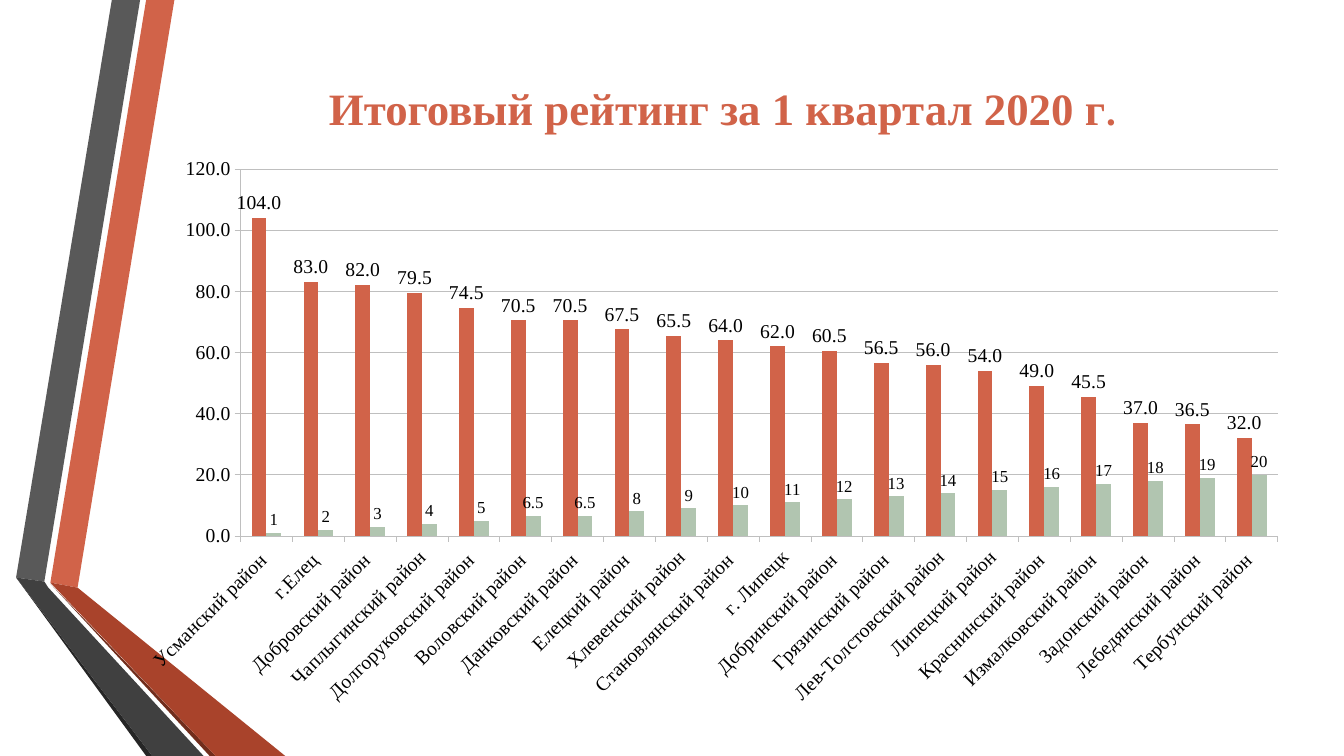
from dataclasses import dataclass

from lxml.etree import SubElement
from pptx import Presentation
from pptx.chart.data import CategoryChartData as ChartData
from pptx.dml.color import RGBColor
from pptx.enum.chart import XL_CHART_TYPE as ChartType
from pptx.enum.chart import XL_LABEL_POSITION as LabelPos
from pptx.enum.chart import XL_TICK_MARK as TickMark
from pptx.enum.text import MSO_AUTO_SIZE as AutoSize
from pptx.enum.text import PP_ALIGN as Align
from pptx.oxml.ns import qn
from pptx.util import Inches, Pt

FONT = "Times New Roman"
ACCENT = "D16349"
GRID = "BFBFBF"


@dataclass
class Ribbon:
    color: str
    points: list[tuple[float, float]]


@dataclass
class Series:
    name: str
    color: str
    label_size: int
    number_format: str
    values: list[float]


RIBBONS = [
    Ribbon(ACCENT, [(0.5, 5.78), (0.77, 5.83), (1.73, 0), (1.45, 0)]),
    Ribbon("595959", [(1.39, 0), (1.11, 0), (0.16, 5.73), (0.44, 5.77)]),
    Ribbon("262626", [(0.16, 5.73), (1.45, 7.5), (1.51, 7.5)]),
    Ribbon("712D1C", [(0.5, 5.79), (2.08, 7.5), (2.14, 7.5)]),
    Ribbon("A9432B", [(0.5, 5.78), (2.14, 7.5), (2.83, 7.5), (0.77, 5.83)]),
    Ribbon("404040", [(2.02, 7.5), (0.48, 5.83), (0.44, 5.77), (0.16, 5.73), (1.51, 7.5)]),
]

DISTRICTS = [
    "Усманский район ", "г.Елец ", "Добровский район ", "Чаплыгинский район",
    "Долгоруковский район ", "Воловский район ", "Данковский район ", "Елецкий район ",
    "Хлевенский район", "Становлянский район ", "г. Липецк", "Добринский район ",
    "Грязинский район ", "Лев-Толстовский район", "Липецкий район", "Краснинский район ",
    "Измалковский район ", "Задонский район ", "Лебедянский район ", "Тербунский район ",
]

SERIES = [
    Series("Series 1", ACCENT, 14, "0.0",
           [104, 83, 82, 79.5, 74.5, 70.5, 70.5, 67.5, 65.5, 64,
            62, 60.5, 56.5, 56, 54, 49, 45.5, 37, 36.5, 32]),
    Series("Series 2", "B1C5B0", 12, "General",
           [1, 2, 3, 4, 5, 6.5, 6.5, *range(8, 21)]),
]


def rgb(color: str) -> RGBColor:
    return RGBColor.from_string(color)


def set_all(obj, formats: dict) -> None:
    for name, value in formats.items():
        setattr(obj, name, value)


def style_font(font, size: float, color: str = "000000", bold: bool = False) -> None:
    set_all(font, {"name": FONT, "size": Pt(size), "bold": bold})
    font.color.rgb = rgb(color)


def style_line(line) -> None:
    line.color.rgb = rgb(GRID)
    line.width = Pt(0.5)


def add_ribbon(s, ribbon: Ribbon) -> None:
    points = [(Inches(x), Inches(y)) for x, y in ribbon.points]
    builder = s.shapes.build_freeform(*points[0])
    builder.add_line_segments(points[1:], close=True)
    sp = builder.convert_to_shape()
    sp.shadow.inherit = False
    sp.fill.solid()
    sp.fill.fore_color.rgb = rgb(ribbon.color)
    sp.line.fill.background()


def add_title(s) -> None:
    sp = s.shapes.add_textbox(Inches(2.49), Inches(0.75), Inches(9.35), Inches(0.64))
    tf = sp.text_frame
    set_all(tf, {"word_wrap": True, "auto_size": AutoSize.SHAPE_TO_FIT_TEXT})
    p = tf.paragraphs[0]
    p.alignment = Align.CENTER
    for text, size in (("Итоговый рейтинг за 1 квартал 2020 г", 32), (".", 28)):
        r = p.add_run()
        r.text = text
        style_font(r.font, size, ACCENT, bold=True)


def place_plot(chart, x: float, y: float, w: float, h: float) -> None:
    plot_area = chart.plots[0]._element.getparent()
    for old in plot_area.findall(qn("c:layout")):
        plot_area.remove(old)
    layout = SubElement(plot_area, qn("c:layout"))
    plot_area.insert(0, layout)
    manual = SubElement(layout, qn("c:manualLayout"))
    parts = {"layoutTarget": "inner", "xMode": "edge", "yMode": "edge",
             "x": x, "y": y, "w": w, "h": h}
    for tag, value in parts.items():
        SubElement(manual, qn(f"c:{tag}")).set("val", str(value))


def style_axes(chart) -> None:
    cat, val = chart.category_axis, chart.value_axis
    for axis in (cat, val):
        set_all(axis, {"major_tick_mark": TickMark.OUTSIDE, "minor_tick_mark": TickMark.NONE})
        style_line(axis.format.line)
        style_font(axis.tick_labels.font, 14)
    cat.has_major_gridlines = False
    body = cat._element.find(qn("c:txPr")).find(qn("a:bodyPr"))
    body.set("rot", "-2700000")
    body.set("vert", "horz")
    set_all(val, {"minimum_scale": 0, "maximum_scale": 120, "major_unit": 20,
                  "has_major_gridlines": True})
    style_line(val.major_gridlines.format.line)
    set_all(val.tick_labels, {"number_format": "0.0", "number_format_is_linked": False})


def add_rating_chart(s) -> None:
    data = ChartData()
    data.categories = DISTRICTS
    for series in SERIES:
        data.add_series(series.name, series.values)
    chart = s.shapes.add_chart(ChartType.COLUMN_CLUSTERED, Inches(0.91), Inches(1.39),
                               Inches(11.81), Inches(5.71), data).chart
    set_all(chart, {"has_legend": False, "has_title": False})
    style_font(chart.font, 12)
    plot = chart.plots[0]
    set_all(plot, {"gap_width": 150, "overlap": 0, "vary_by_categories": False})
    for series, bars in zip(SERIES, plot.series):
        bars.invert_if_negative = False
        bars.format.fill.solid()
        bars.format.fill.fore_color.rgb = rgb(series.color)
        labels = bars.data_labels
        set_all(labels, {"show_value": True, "position": LabelPos.OUTSIDE_END,
                         "number_format": series.number_format,
                         "number_format_is_linked": False})
        style_font(labels.font, series.label_size)
    style_axes(chart)
    place_plot(chart, 0.125, 0.05, 0.871, 0.638)


def main() -> None:
    prs = Presentation()
    set_all(prs, {"slide_width": Inches(13.33), "slide_height": Inches(7.5)})
    s = prs.slides.add_slide(prs.slide_layouts[6])
    for ribbon in RIBBONS:
        add_ribbon(s, ribbon)
    add_title(s)
    add_rating_chart(s)
    prs.save("out.pptx")


if __name__ == "__main__":
    main()
